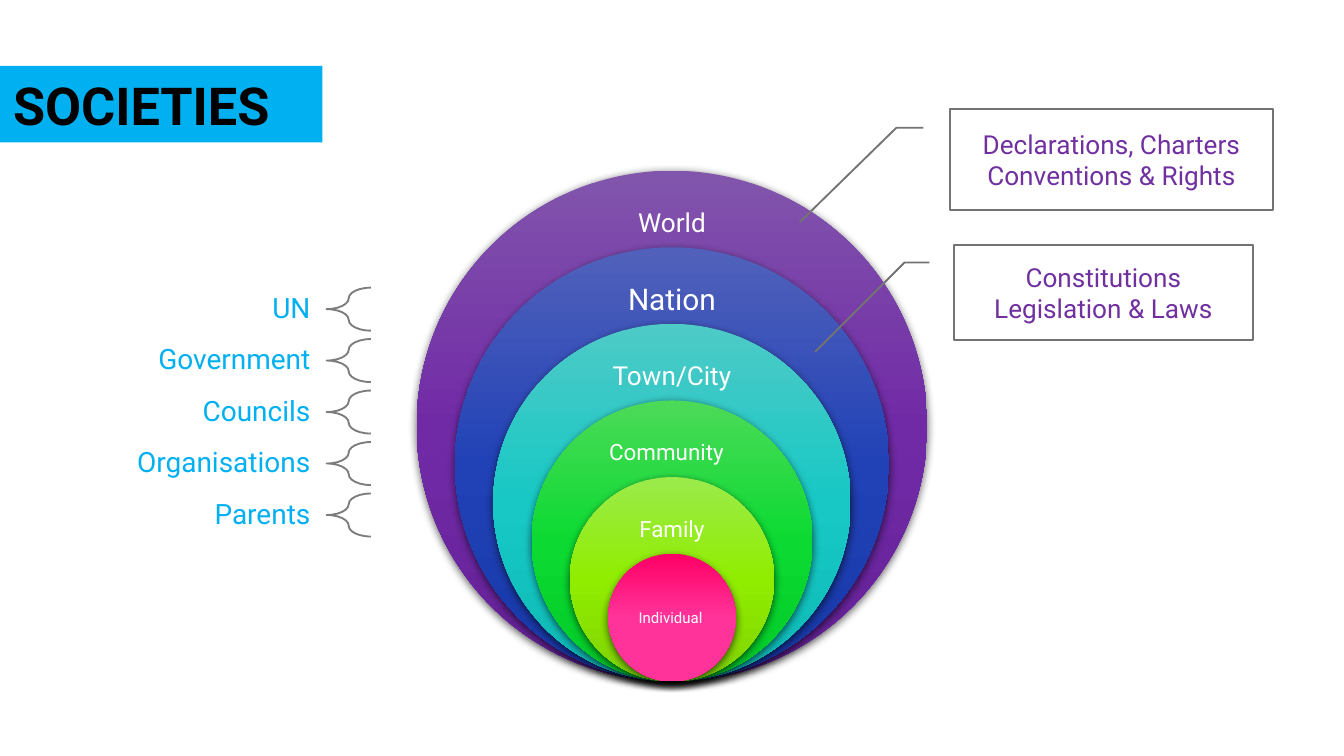
from lxml import etree
from pptx import Presentation
from pptx.dml.color import RGBColor
from pptx.enum import shapes, text
from pptx.oxml import ns
from pptx.util import Inches, Pt

COLORS = {
    "cyan": "00B0F0", "white": "FFFFFF", "black": "000000",
    "purple": "7030A0", "outline": "737373", "brace": "7C7C7C",
}
RINGS = [
    ("World", 14, ("8155AC", "712AA6", "652198")),
    ("Nation", 16, ("5161BB", "2142B6", "1738A8")),
    ("Town/City", 14, ("4ECAC7", "17C8C4", "0DB9B5")),
    ("Community", 12, ("4CDA59", "0CDA32", "02CA27")),
    ("Family", 12, ("9BEB4B", "90ED00", "80D200")),
    ("Individual", 8, ("FF0066", "FF3399", "FF3399")),
]
LABEL_SHIFTS = {"Community": -0.04, "Individual": -0.01}
BODIES = ["UN", "Government", "Councils", "Organisations", "Parents"]
ALIGN = text.PP_ALIGN
SHAPE = shapes.MSO_SHAPE


def add_child(parent, tag, **attributes):
    """Append a DrawingML element to its parent and return it."""
    child = etree.SubElement(parent, ns.qn(tag))
    for name, value in attributes.items():
        child.set(name, str(value))
    return child


def write(shape, words, size, color, align=ALIGN.CENTER, bold=False,
          margins=(0.1, 0.05), spacing=None):
    """Put one formatted paragraph into a shape."""
    frame = shape.text_frame
    frame.word_wrap = True
    frame.vertical_anchor = text.MSO_ANCHOR.MIDDLE
    frame.margin_left = frame.margin_right = Inches(margins[0])
    frame.margin_top = frame.margin_bottom = Inches(margins[1])
    paragraph = frame.paragraphs[0]
    paragraph.alignment = align
    paragraph.line_spacing = spacing
    run = paragraph.add_run()
    run.text = words
    font = run.font
    font.name, font.size, font.bold = "Roboto", Pt(size), bold
    font.color.rgb = RGBColor.from_string(COLORS[color])


def add_shape(slide, kind, box, fill=None, line=None):
    """Add a preset shape with an optional solid fill and outline."""
    shape = slide.shapes.add_shape(kind, *map(Inches, box))
    shape.shadow.inherit = False
    if fill:
        shape.fill.solid()
        shape.fill.fore_color.rgb = RGBColor.from_string(COLORS[fill])
    else:
        shape.fill.background()
    if line:
        shape.line.color.rgb = RGBColor.from_string(COLORS[line])
        shape.line.width = Pt(1)
    else:
        shape.line.fill.background()
    return shape


def add_label(slide, box, words, size, color, **style):
    """Add a text box holding one label."""
    write(slide.shapes.add_textbox(*map(Inches, box)), words, size, color, **style)


def add_disc(slide, box, stops):
    """Add a circle with a vertical gradient and a soft shadow."""
    disc = add_shape(slide, SHAPE.OVAL, box)
    disc.fill.gradient()
    disc.fill.gradient_angle = 270
    properties = disc._element.spPr
    stop_list = properties.find(".//" + ns.qn("a:gsLst"))
    for stop in list(stop_list):
        stop_list.remove(stop)
    for index, color in enumerate(stops):
        stop = add_child(stop_list, "a:gs", pos=index * 50000)
        add_child(stop, "a:srgbClr", val=color)
    shadow = add_child(properties.find(ns.qn("a:effectLst")), "a:outerShdw",
                       blurRad=Pt(4.5), dist=Pt(1.5), dir=5400000, rotWithShape=0)
    shade = add_child(shadow, "a:srgbClr", val=COLORS["black"])
    add_child(shade, "a:alpha", val=63000)


def add_rings(slide):
    """Stack the circles on a shared bottom point, each with its label."""
    center, bottom, smallest, step = 5, 5.07, 0.95, 0.57
    for index, (name, size, stops) in enumerate(RINGS):
        steps_left = len(RINGS) - 1 - index
        diameter = smallest + step * steps_left
        top = bottom - diameter
        add_disc(slide, (center - diameter / 2, top, diameter, diameter), stops)
        middle = top + (0.38 if steps_left else diameter / 2)
        left = center - 0.7 + LABEL_SHIFTS.get(name, 0)
        add_label(slide, (left, middle - 0.19, 1.4, 0.38), name, size, "white")


def add_bodies(slide):
    """List the responsible bodies, each followed by a brace."""
    for index, name in enumerate(BODIES):
        top = 2.14 + index * 0.383
        add_label(slide, (0.77, top, 1.66, 0.32), name, 15, "cyan",
                  align=ALIGN.RIGHT, margins=(0.12, 0.04), spacing=0.9)
        brace = add_shape(slide, SHAPE.LEFT_BRACE, (2.43, top, 0.33, 0.32),
                          line="brace")
        brace.adjustments[0] = 0.35


def add_callout(slide, box, words, fill=None):
    """Add a bordered callout with a bent leader line."""
    callout = add_shape(slide, SHAPE.LINE_CALLOUT_2, box, fill, "outline")
    write(callout, words, 14, "purple")


def main():
    """Build the slide and save it."""
    presentation = Presentation()
    presentation.slide_width = Inches(10)
    presentation.slide_height = presentation.slide_width * 9 // 16
    slide = presentation.slides.add_slide(presentation.slide_layouts[6])
    add_rings(slide)
    add_bodies(slide)
    add_callout(slide, (7.07, 0.81, 2.4, 0.75),
                "Declarations, Charters Conventions & Rights", "white")
    add_callout(slide, (7.1, 1.82, 2.22, 0.71),
                "Constitutions Legislation & Laws")
    title = add_shape(slide, SHAPE.RECTANGLE, (0, 0.49, 2.4, 0.57), "cyan")
    write(title, "SOCIETIES", 28, "black", align=ALIGN.LEFT, bold=True)
    presentation.save("out.pptx")


if __name__ == "__main__":
    main()
